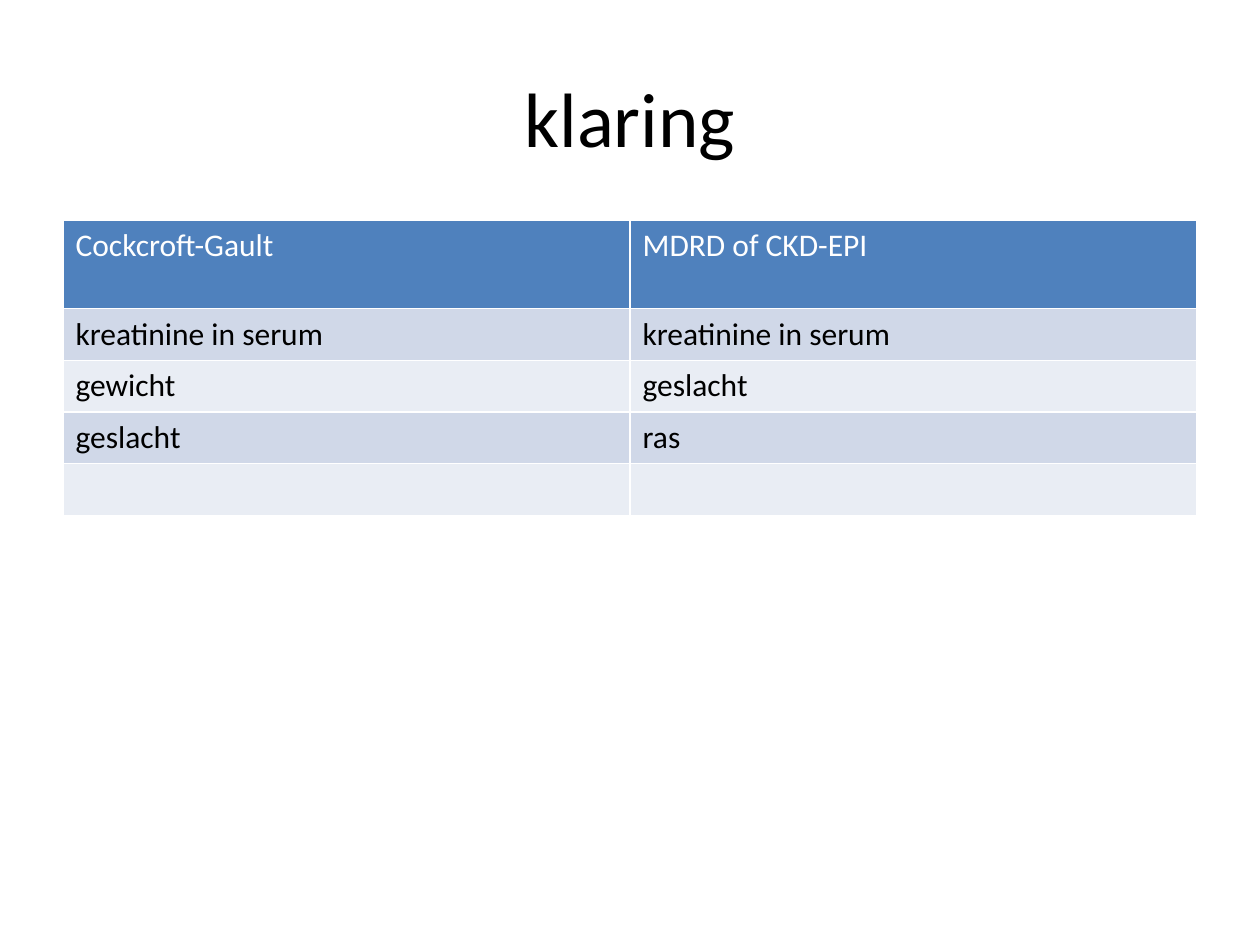
from pptx import Presentation, util as u
from pptx.dml.color import RGBColor
from pptx.enum import text

WIDTH, HEIGHT = u.Inches(10), u.Inches(7.5)
MARGIN = 0.05  # share of the slide width
HEADER_FILL, BANDS = "4F81BD", ("D0D8E8", "E9EDF4")
ROWS = [
    ("Cockcroft-Gault", "MDRD of CKD-EPI"),
    ("kreatinine in serum", "kreatinine in serum"),
    ("gewicht", "geslacht"),
    ("geslacht", "ras"),
    ("", ""),
]


def color(value):
    return RGBColor.from_string(value)


def box(top, height):
    """Full-width area between the margins; top and height in inches."""
    left = int(WIDTH * MARGIN)
    return left, u.Inches(top), WIDTH - 2 * left, u.Inches(height)


def write(p, words, size, hue):
    font = p.font
    if words:
        r = p.add_run()
        r.text = words
        font = r.font
    style = {"name": "Calibri", "size": u.Pt(size), "bold": False}
    for name, value in style.items():
        setattr(font, name, value)
    font.color.rgb = color(hue)


def add_title(s, words):
    tf = s.shapes.add_textbox(*box(0.3, 1.25)).text_frame
    tf.word_wrap = True
    tf.vertical_anchor = text.MSO_ANCHOR.MIDDLE
    p = tf.paragraphs[0]
    p.alignment = text.PP_ALIGN.CENTER
    write(p, words, 44, "000000")


def add_comparison(s, rows):
    # The default table style supplies the white cell borders
    table = s.shapes.add_table(len(rows), len(rows[0]), *box(1.75, 2.32)).table
    for i, row in enumerate(rows):
        header = i == 0
        table.rows[i].height = u.Inches(0.7 if header else 0.41)
        for j, words in enumerate(row):
            cell = table.cell(i, j)
            cell.fill.solid()
            cell.fill.fore_color.rgb = color(HEADER_FILL if header else BANDS[(i - 1) % 2])
            write(cell.text_frame.paragraphs[0], words, 18, "FFFFFF" if header else "000000")


def main():
    prs = Presentation()
    prs.slide_width, prs.slide_height = WIDTH, HEIGHT
    s = prs.slides.add_slide(prs.slide_layouts[6])
    add_title(s, "klaring")
    add_comparison(s, ROWS)
    prs.save("out.pptx")


if __name__ == "__main__":
    main()
